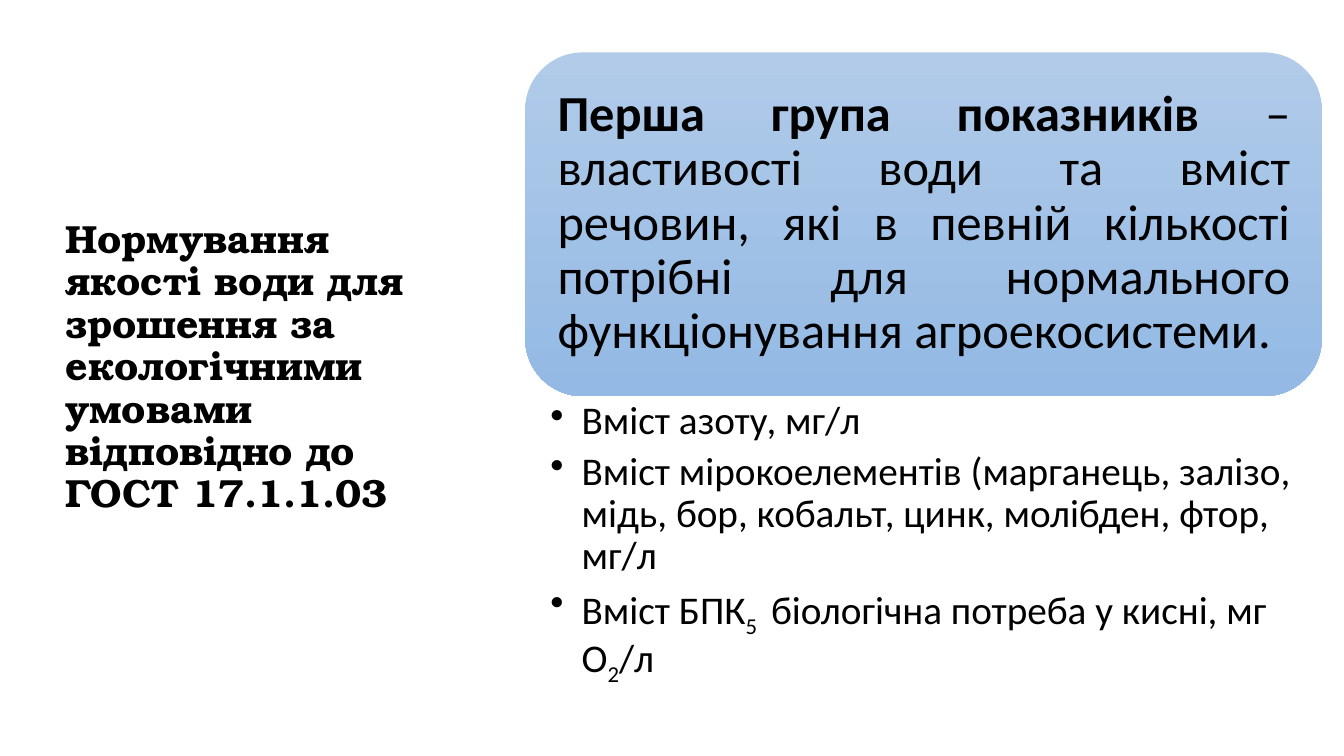
from lxml.etree import SubElement
from pptx import Presentation
from pptx.dml.color import RGBColor
from pptx.enum.shapes import MSO_SHAPE as Preset
from pptx.enum.text import MSO_ANCHOR as Anchor, PP_ALIGN as Align
from pptx.oxml.ns import qn
from pptx.util import Pt

PX = 9144  # 100 px to the inch
COLORS = {"text": "000000", "top": "B1CBE9", "bottom": "93B9E4"}


def add_text_box(left, top, width, height, insets, anchor):
    """Add a wrapping text box; insets are left, top, right, bottom."""
    box = page.shapes.add_textbox(left * PX, top * PX, width * PX, height * PX)
    frame = box.text_frame
    frame.word_wrap = True
    frame.vertical_anchor = anchor
    frame.margin_left, frame.margin_top, frame.margin_right, frame.margin_bottom = (
        inset * PX for inset in insets)
    return frame


def style_paragraph(para, font_name, size):
    para.line_spacing = 0.9
    para.font.name = font_name
    para.font.size = Pt(size)
    para.font.color.rgb = RGBColor.from_string(COLORS["text"])


deck = Presentation()
deck.slide_width, deck.slide_height = 1333 * PX, 750 * PX
page = deck.slides.add_slide(deck.slide_layouts[6])

# Title
title = add_text_box(55, 64, 416, 602, (10, 5, 10, 5), Anchor.MIDDLE).paragraphs[0]
style_paragraph(title, "TeX Gyre Bonum", 28)
title.font.bold = True
title.add_run().text = ("Нормування якості води для зрошення за екологічними "
                        "умовами відповідно до ГОСТ 17.1.1.03")

# Panel with the definition of the group
panel = page.shapes.add_shape(Preset.ROUNDED_RECTANGLE, 521 * PX, 52 * PX, 790 * PX, 341 * PX)
panel.shadow.inherit = False
panel.line.fill.background()
panel.fill.gradient()
panel.fill.gradient_angle = 270
for stop, name in zip(panel.fill.gradient_stops, ("top", "bottom")):
    stop.color.rgb = RGBColor.from_string(COLORS[name])

definition = add_text_box(538, 68, 757, 308, (15, 15, 15, 15), Anchor.MIDDLE).paragraphs[0]
style_paragraph(definition, "Calibri", 36)
definition.alignment = Align.JUSTIFY
term = definition.add_run()
term.text = "Перша група показників "
term.font.bold = True
definition.add_run().text = ("– властивості води та вміст речовин, які в певній кількості "
                             "потрібні для нормального функціонування агроекосистеми.")

# Indicators: each is a list of (text, is subscript)
indicators = [
    [("Вміст азоту, мг/л", False)],
    [("Вміст мірокоелементів (марганець, залізо, мідь, бор, кобальт, "
      "цинк, молібден, фтор, мг/л", False)],
    [("Вміст БПК", False), ("5 ", True), (" біологічна потреба у кисні, мг О", False),
     ("2", True), ("/л", False)],
]
indicator_frame = add_text_box(521, 393, 790, 293, (25, 5, 28, 5), Anchor.TOP)
for index, pieces in enumerate(indicators):
    para = indicator_frame.add_paragraph() if index else indicator_frame.paragraphs[0]
    style_paragraph(para, "Calibri", 28)
    para.space_after = Pt(5.6)
    properties = para._p.get_or_add_pPr()
    properties.set("marL", str(31 * PX))
    properties.set("indent", str(-31 * PX))
    bullet = SubElement(properties, qn("a:buChar"), char="•")
    properties.find(qn("a:defRPr")).addprevious(bullet)
    for text, is_subscript in pieces:
        span = para.add_run()
        span.text = text
        if is_subscript:
            span._r.get_or_add_rPr().set("baseline", "-25000")

deck.save("out.pptx")
